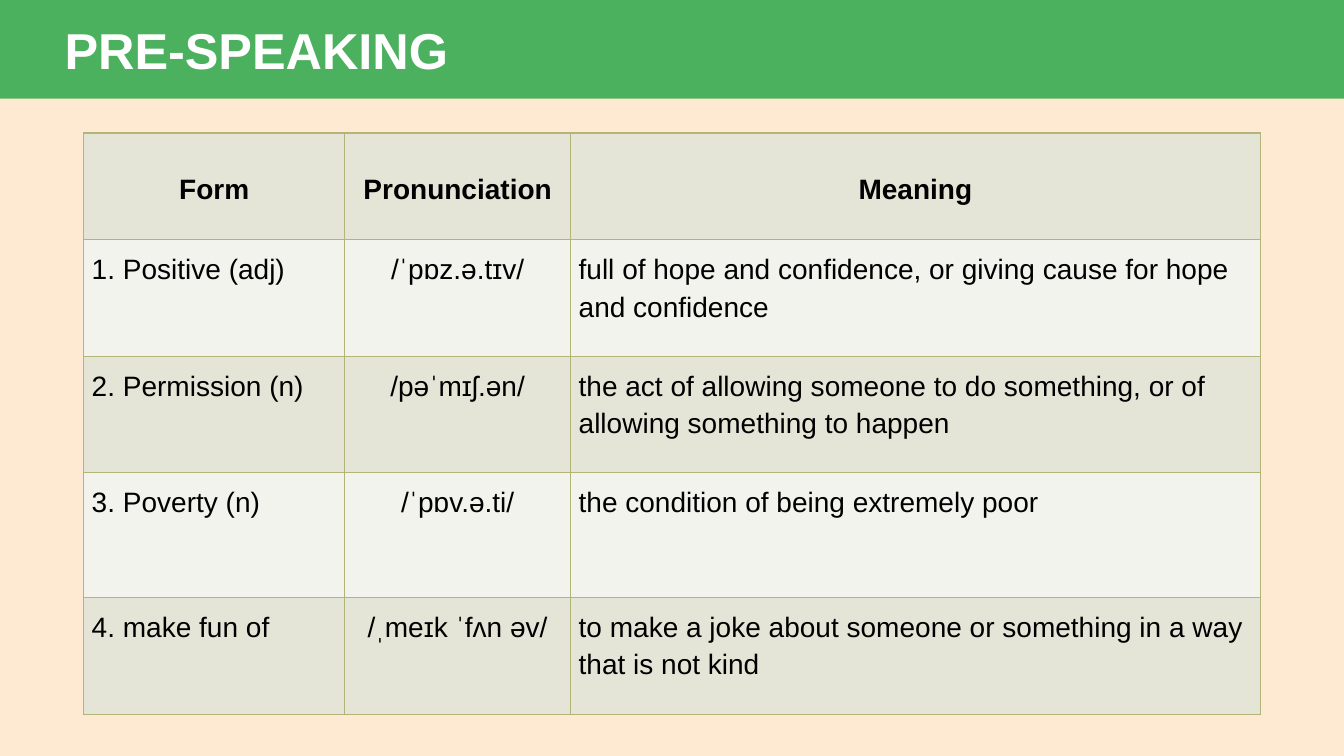
from dataclasses import dataclass

from lxml.etree import SubElement
from pptx import Presentation
from pptx.dml.color import RGBColor
from pptx.enum.shapes import MSO_SHAPE
from pptx.enum.text import MSO_ANCHOR, PP_ALIGN
from pptx.oxml.ns import qn
from pptx.util import Inches, Pt

TITLE = "PRE-SPEAKING"
HEADINGS = ("Form", "Pronunciation", "Meaning")
VOCABULARY = [
    ("1. Positive (adj)", "/ˈpɒz.ə.tɪv/",
     "full of hope and confidence, or giving cause for hope and confidence"),
    ("2. Permission (n)", "/pəˈmɪʃ.ən/",
     "the act of allowing someone to do something, or of allowing something to happen"),
    ("3. Poverty (n)", "/ˈpɒv.ə.ti/", "the condition of being extremely poor"),
    ("4. make fun of", "/ˌmeɪk ˈfʌn əv/",
     "to make a joke about someone or something in a way that is not kind"),
]
COLUMN_WIDTHS = (2.59, 2.24, 6.84)
ROW_HEIGHTS = (1.06, 1.16, 1.15, 1.24, 1.16)
FORM, PRONUNCIATION, MEANING = range(3)


@dataclass(frozen=True)
class Theme:
    """Colours, font and type sizes of the slide."""
    font: str = "Arial"
    background: str = "FEE9D2"
    band: str = "4CB15F"
    title: str = "FFFFFF"
    text: str = "000000"
    border: str = "B2B577"
    rows: tuple = ("E4E5D6", "F2F3EC")
    title_size: int = 36
    text_size: int = 20
    border_width: int = 1


THEME = Theme()


def paint(fill, colour):
    """Apply a solid colour to a fill."""
    fill.solid()
    fill.fore_color.rgb = RGBColor.from_string(colour)


def style_font(font, size, colour, bold):
    """Set the face, size, colour and weight of a font."""
    font.name = THEME.font
    font.size = Pt(size)
    font.bold = bold
    font.color.rgb = RGBColor.from_string(colour)


def add_borders(cell):
    """Draw a thin line on all four sides of a cell."""
    properties = cell._tc.get_or_add_tcPr()
    for side in ("a:lnL", "a:lnR", "a:lnT", "a:lnB"):
        line = SubElement(properties, qn(side), w=str(Pt(THEME.border_width)))
        SubElement(SubElement(line, qn("a:solidFill")), qn("a:srgbClr"), val=THEME.border)


def fill_cell(cell, wording, row, column):
    """Write and format one cell of the vocabulary table."""
    heading = row == 0
    centred = heading or column == PRONUNCIATION
    add_borders(cell)
    paint(cell.fill, THEME.rows[row % 2])
    cell.margin_left = cell.margin_right = Inches(0.04 if centred else 0.08)
    cell.margin_top = cell.margin_bottom = Inches(0.08)
    cell.vertical_anchor = MSO_ANCHOR.MIDDLE if heading else MSO_ANCHOR.TOP
    cell.text = wording
    paragraph = cell.text_frame.paragraphs[0]
    paragraph.alignment = PP_ALIGN.CENTER if centred else PP_ALIGN.LEFT
    paragraph.line_spacing = 1.2
    style_font(paragraph.font, THEME.text_size, THEME.text, heading)
    if column == FORM and not heading:
        properties = paragraph._p.get_or_add_pPr()
        properties.set("marL", str(Inches(0.16)))
        properties.set("indent", str(Inches(-0.16)))


def add_heading(slide, slide_width):
    """Place the title on a band across the top."""
    title = slide.shapes.title
    band = slide.shapes.add_shape(MSO_SHAPE.RECTANGLE, 0, 0, slide_width, Inches(0.98))
    band.shadow.inherit = False
    paint(band.fill, THEME.band)
    band.line.fill.background()
    title.element.addprevious(band.element)

    title.left, title.top = Inches(0.54), Inches(0.14)
    title.width, title.height = Inches(5), Inches(0.71)
    title.text = TITLE
    title.text_frame.vertical_anchor = MSO_ANCHOR.TOP
    paragraph = title.text_frame.paragraphs[0]
    paragraph.alignment = PP_ALIGN.LEFT
    style_font(paragraph.font, THEME.title_size, THEME.title, True)


def add_vocabulary(slide):
    """Build the table of words, sounds and meanings."""
    rows = [HEADINGS, *VOCABULARY]
    vocabulary = slide.shapes.add_table(
        len(rows), len(HEADINGS), Inches(0.83), Inches(1.32),
        Inches(sum(COLUMN_WIDTHS)), Inches(sum(ROW_HEIGHTS))).table
    vocabulary.horz_banding = False
    for column, width in zip(vocabulary.columns, COLUMN_WIDTHS):
        column.width = Inches(width)
    for row, height in zip(vocabulary.rows, ROW_HEIGHTS):
        row.height = Inches(height)
    for row, entry in enumerate(rows):
        for column, wording in enumerate(entry):
            fill_cell(vocabulary.cell(row, column), wording, row, column)


def main():
    """Create and save the vocabulary slide."""
    deck = Presentation()
    deck.slide_width, deck.slide_height = Inches(13.33), Inches(7.5)
    slide = deck.slides.add_slide(deck.slide_layouts[5])
    paint(slide.background.fill, THEME.background)
    add_heading(slide, deck.slide_width)
    add_vocabulary(slide)
    deck.save("out.pptx")


if __name__ == "__main__":
    main()
